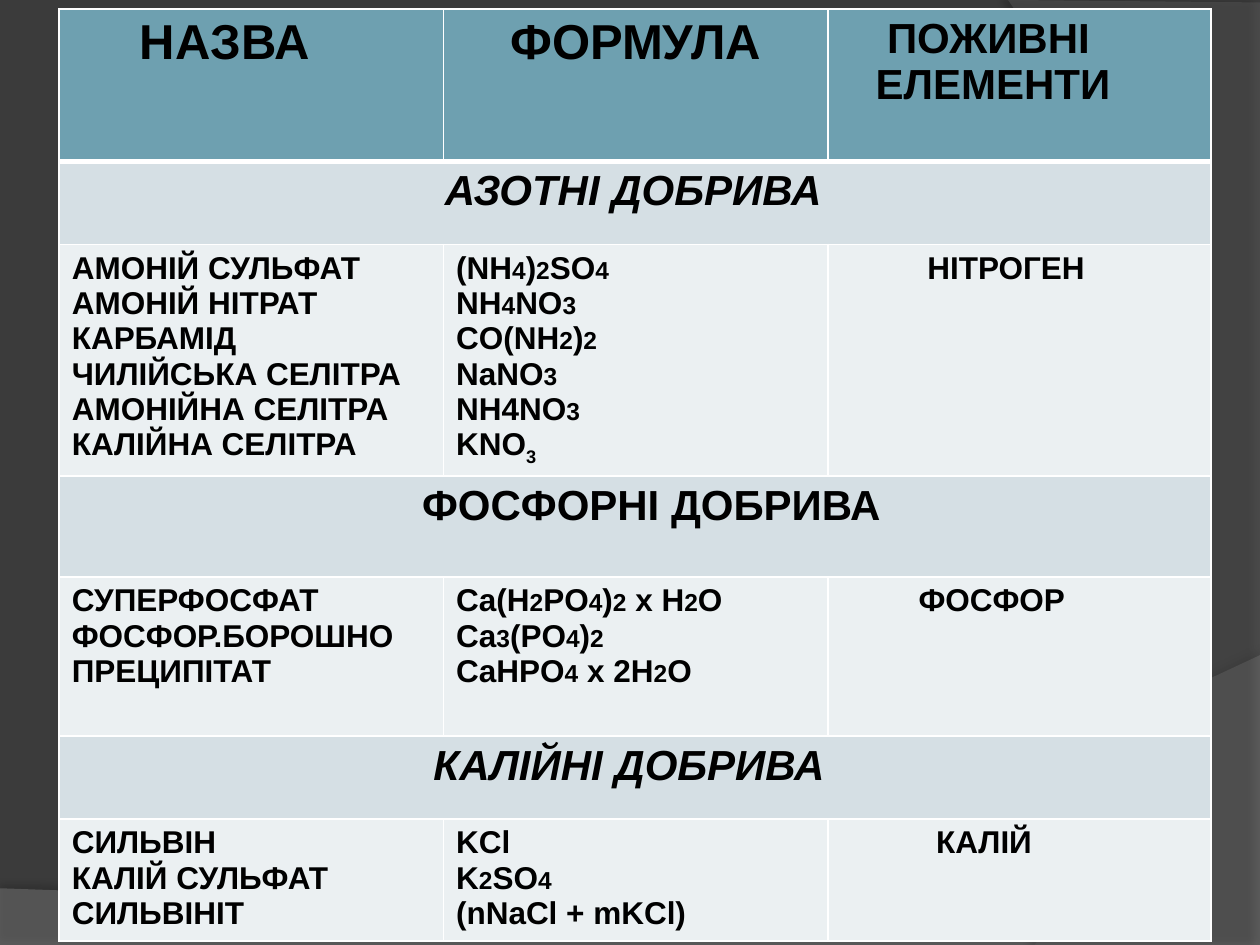
from dataclasses import dataclass

from lxml import etree
from pptx import Presentation
from pptx.dml.color import RGBColor
from pptx.oxml.ns import qn
from pptx.util import Inches, Pt

GRID = Inches(0.01)
WIDE, HIGH = 1000, 750
COLS = (305, 305, 304)
ROWS = (121, 66, 184, 80, 126, 66, 97)
SIDES = ("L", "R", "T", "B")


@dataclass(frozen=True)
class Theme:
    """Colours, type sizes and line widths of the slide."""
    font: str = "Arial"
    ink: str = "000000"
    back: str = "3B3B3B"
    wave: str = "7F7F7F"
    arc: str = "5E5E5E"
    line: str = "FFFFFF"
    head: str = "6EA0B0"
    band: str = "D5DFE4"
    body: str = "EBF0F2"
    big: int = 28
    mid: int = 24
    text: int = 18
    small: int = 14
    thin: int = 1
    thick: int = 3


def grid(count):
    """Turn grid steps into a length."""
    return int(round(count * GRID))


def node(parent, tag, **attrs):
    """Add an XML child with the given attributes."""
    child = etree.SubElement(parent, qn(tag))
    for key, value in attrs.items():
        child.set(key, str(value))
    return child


def curve(start, one, two, end, steps=40):
    """List points along a cubic curve, without its start."""
    points = []
    for step in range(1, steps + 1):
        t = step / steps
        parts = ((1 - t) ** 3, 3 * t * (1 - t) ** 2, 3 * t * t * (1 - t), t ** 3)
        points.append(tuple(sum(k * p[axis] for k, p in zip(parts, (start, one, two, end)))
                            for axis in (0, 1)))
    return points


def write(cell, theme, lines, size, italic=False, indent=0):
    """Fill a cell; _ marks a small character and _~ a true subscript."""
    frame = cell.text_frame
    indents = indent if isinstance(indent, tuple) else (indent,) * len(lines)
    for index, (line, inset) in enumerate(zip(lines, indents)):
        para = frame.paragraphs[0] if index == 0 else frame.add_paragraph()
        para._p.get_or_add_pPr().set("marL", str(grid(inset)))
        plain, *marked = line.split("_")
        runs = [(plain, size, False)]
        for part in marked:
            lower = part.startswith("~")
            part = part.lstrip("~")
            runs.append((part[0], size if lower else theme.small, lower))
            runs.append((part[1:], size, False))
        for words, points, lower in runs:
            if not words:
                continue
            run = para.add_run()
            run.text = words
            font = run.font
            font.name, font.size = theme.font, Pt(points)
            font.bold, font.italic = True, italic
            font.color.rgb = RGBColor.from_string(theme.ink)
            if lower:
                run._r.get_or_add_rPr().set("baseline", "-25000")


class Page:
    """Draws each kind of element on the current slide."""

    def __init__(self, deck, theme):
        """Add a blank slide with a plain background."""
        self.theme = theme
        self.slide = deck.slides.add_slide(deck.slide_layouts[6])
        fill = self.slide.background.fill
        fill.solid()
        fill.fore_color.rgb = RGBColor.from_string(theme.back)

    def sweep(self, points, color, alpha, shade, dist, angle):
        """Draw a clear curved shape with a soft shadow."""
        first, *rest = [(grid(x), grid(y)) for x, y in points]
        path = self.slide.shapes.build_freeform(*first, scale=1.0)
        path.add_line_segments(rest, close=True)
        shape = path.convert_to_shape()
        shape.fill.solid()
        shape.fill.fore_color.rgb = RGBColor.from_string(color)
        shape.line.fill.background()
        shape.shadow.inherit = False
        props = shape._element.spPr
        tint = props.find(qn("a:solidFill")).find(qn("a:srgbClr"))
        node(tint, "a:alpha", val=alpha * 1000)
        glow = node(props.find(qn("a:effectLst")), "a:outerShdw", blurRad=Pt(4),
                    dist=Pt(dist), dir=angle * 60000, algn="ctr", rotWithShape=0)
        dark = node(glow, "a:srgbClr", val=self.theme.ink)
        node(dark, "a:alpha", val=shade * 1000)

    def paint(self, cell, color, thick):
        """Set the borders and fill of a cell."""
        props = cell._tc.get_or_add_tcPr()
        for side in SIDES:
            width = self.theme.thick if side == thick else self.theme.thin
            edge = node(props, f"a:ln{side}", w=Pt(width))
            node(node(edge, "a:solidFill"), "a:srgbClr", val=self.theme.line)
        cell.fill.solid()
        cell.fill.fore_color.rgb = RGBColor.from_string(color)

    def table(self, left, top, rows):
        """Draw rows of (colour, cells); a lone cell spans its row."""
        table = self.slide.shapes.add_table(
            len(ROWS), len(COLS), grid(left), grid(top),
            grid(sum(COLS)), grid(sum(ROWS))).table
        for col, width in zip(table.columns, COLS):
            col.width = grid(width)
        for row, height in zip(table.rows, ROWS):
            row.height = grid(height)
        for r, (color, cells) in enumerate(rows):
            for c in range(len(COLS)):
                self.paint(table.cell(r, c), color, {0: "B", 1: "T"}.get(r))
            if len(cells) == 1:
                table.cell(r, 0).merge(table.cell(r, len(COLS) - 1))
            for c, style in enumerate(cells):
                write(table.cell(r, c), self.theme, **style)


def main():
    """Build and save the slide."""
    deck = Presentation()
    deck.slide_width, deck.slide_height = grid(WIDE), grid(HIGH)
    theme = Theme()
    page = Page(deck, theme)

    wave = [(0, 705), (0, HIGH), (WIDE, HIGH), (WIDE, 520)]
    wave += curve(wave[-1], (559, 729), (391, 719), wave[0])
    page.sweep(wave, theme.wave, 45, shade=35, dist=3.5, angle=270)
    arc = [(WIDE, 2), (WIDE, HIGH), (821, HIGH)]
    arc += curve(arc[-1], (935, 619), (1018, 300), (800, 0))
    page.sweep(arc, theme.arc, 40, shade=45, dist=4, angle=180)

    def head(size, indent, *lines):
        return dict(lines=lines, size=size, indent=indent)

    def band(text, indent, italic=True):
        return theme.band, [dict(lines=(text,), size=theme.mid, italic=italic, indent=indent)]

    def body(names, codes, element, indent):
        return theme.body, [dict(lines=names, size=theme.text),
                            dict(lines=codes, size=theme.text),
                            dict(lines=(element,), size=theme.text, indent=indent)]

    page.table(47, 7, [
        (theme.head, [head(theme.big, 54, "НАЗВА"),
                      head(theme.big, 43, "ФОРМУЛА"),
                      head(theme.mid, (37, 28), "ПОЖИВНІ", "ЕЛЕМЕНТИ")]),
        band("АЗОТНІ ДОБРИВА", 296),
        body(("АМОНІЙ СУЛЬФАТ", "АМОНІЙ НІТРАТ", "КАРБАМІД", "ЧИЛІЙСЬКА СЕЛІТРА",
              "АМОНІЙНА СЕЛІТРА", "КАЛІЙНА СЕЛІТРА"),
             ("(NH_4)_2SO_4", "NH_4NO_3", "CO(NH_2)_2", "NaNO_3", "NH4NO_3", "KNO_~3"),
             "НІТРОГЕН", 69),
        band("ФОСФОРНІ ДОБРИВА", 278, italic=False),
        body(("СУПЕРФОСФАТ", "ФОСФОР.БОРОШНО", "ПРЕЦИПІТАТ"),
             ("Ca(H_2PO_4)_2 x H_2O", "Ca_3(PO_4)_2", "CaHPO_4 x 2H_2O"),
             "ФОСФОР", 62),
        band("КАЛІЙНІ ДОБРИВА", 287),
        body(("СИЛЬВІН", "КАЛІЙ СУЛЬФАТ", "СИЛЬВІНІТ"),
             ("KCl", "K_2SO_4", "(nNaCl + mKCl)"),
             "КАЛІЙ", 76),
    ])
    deck.save("out.pptx")


if __name__ == "__main__":
    main()
